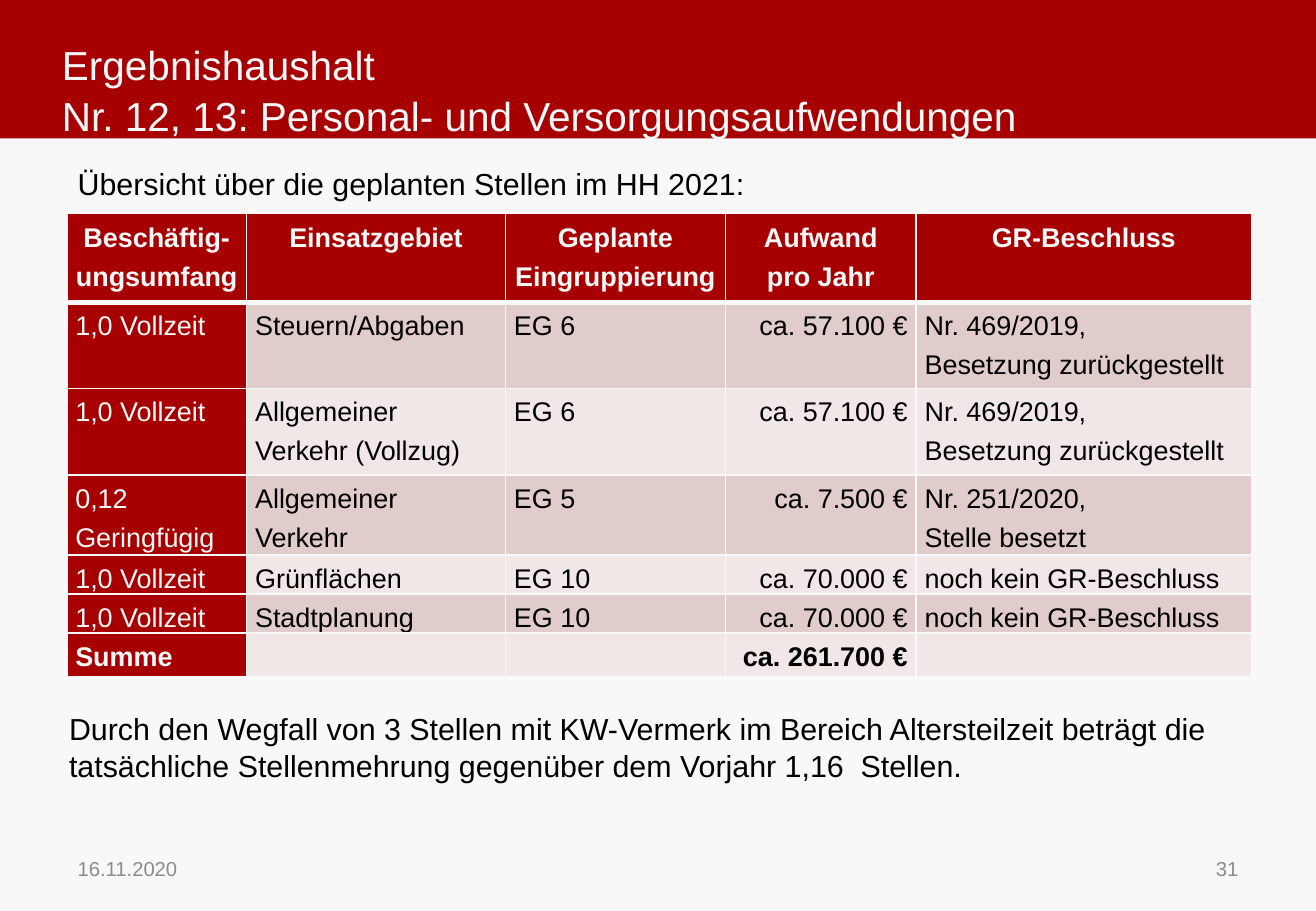
import pptx
import pptx.dml.color
import pptx.enum.shapes
import pptx.enum.text
import pptx.oxml
import pptx.oxml.ns
import pptx.util
from pptx.util import Inches

ALIGN = pptx.enum.text.PP_ALIGN
ANCHOR = pptx.enum.text.MSO_ANCHOR
FONT = "Arial"
COLORS = {"red": "A60000", "paper": "F8F8F8", "black": "000000", "gray": "8C8C8C",
          "band_dark": "E1CCCC", "band_light": "F1E7E7"}

TITLE = "Ergebnishaushalt\vNr. 12, 13: Personal- und Versorgungsaufwendungen"
TEXTS = [
    ("Übersicht über die geplanten Stellen im HH 2021:",
     (0.54, 1.31, 9.28, 0.4), 18, "black", ALIGN.LEFT, ANCHOR.TOP),
    ("Durch den Wegfall von 3 Stellen mit KW-Vermerk im Bereich Altersteilzeit beträgt die "
     "tatsächliche Stellenmehrung gegenüber dem Vorjahr 1,16  Stellen.",
     (0.47, 5.8, 9.84, 0.71), 18, "black", ALIGN.LEFT, ANCHOR.TOP),
    ("16.11.2020", (0.54, 6.95, 2.53, 0.4), 12, "gray", ALIGN.LEFT, ANCHOR.MIDDLE),
    ("31", (7.76, 6.95, 2.53, 0.4), 12, "gray", ALIGN.RIGHT, ANCHOR.MIDDLE),
]
POSITIONS = [
    ("Beschäftig-ungsumfang", "Einsatzgebiet", "Geplante\nEingruppierung",
     "Aufwand\npro Jahr", "GR-Beschluss"),
    ("1,0 Vollzeit", "Steuern/Abgaben", "EG 6", "ca. 57.100 €",
     "Nr. 469/2019,\nBesetzung zurückgestellt"),
    ("1,0 Vollzeit", "Allgemeiner Verkehr (Vollzug)", "EG 6", "ca. 57.100 €",
     "Nr. 469/2019,\nBesetzung zurückgestellt"),
    ("0,12 Geringfügig", "Allgemeiner Verkehr", "EG 5", "ca. 7.500 €",
     "Nr. 251/2020,\nStelle besetzt"),
    ("1,0 Vollzeit", "Grünflächen", "EG 10", "ca. 70.000 €", "noch kein GR-Beschluss"),
    ("1,0 Vollzeit", "Stadtplanung", "EG 10", "ca. 70.000 €", "noch kein GR-Beschluss"),
    ("Summe", "", "", "ca. 261.700 €", ""),
]
COLUMN_WIDTHS = [1.48, 2.13, 1.81, 1.57, 2.76]
ROW_HEIGHTS = [0.73, 0.71, 0.71, 0.66, 0.32, 0.32, 0.36]
AMOUNT_COLUMN = 3


def rgb(name):
    return pptx.dml.color.RGBColor.from_string(COLORS[name])


def format_text(frame, size, color, alignment, bold=False, line_spacing=None):
    for paragraph in frame.paragraphs:
        paragraph.alignment = alignment
        if line_spacing:
            paragraph.line_spacing = line_spacing
        for run in paragraph.runs:
            run.font.name = FONT
            run.font.size = pptx.util.Pt(size)
            run.font.bold = bold
            run.font.color.rgb = rgb(color)


def set_borders(cell, widths):
    properties = cell._tc.get_or_add_tcPr()
    for index, (side, points) in enumerate(widths.items()):
        properties.insert(index, pptx.oxml.parse_xml(
            f'<a:{side} {pptx.oxml.ns.nsdecls("a")} w="{pptx.util.Pt(points)}">'
            f'<a:solidFill><a:srgbClr val="{COLORS["paper"]}"/></a:solidFill></a:{side}>'))


def add_title(slide, width):
    title = slide.shapes.title
    band = slide.shapes.add_shape(pptx.enum.shapes.MSO_SHAPE.RECTANGLE,
                                  0, 0, width, Inches(1.14))
    band.shadow.inherit = False
    band.fill.solid()
    band.fill.fore_color.rgb = rgb("red")
    band.line.fill.background()
    title.element.addprevious(band.element)
    title.left, title.top, title.width, title.height = map(Inches, (0.51, 0.36, 8.32, 0.74))
    frame = title.text_frame
    frame.text = TITLE
    frame.word_wrap = True
    frame.auto_size = pptx.enum.text.MSO_AUTO_SIZE.NONE
    frame.vertical_anchor = ANCHOR.MIDDLE
    frame.margin_left = frame.margin_right = frame.margin_top = frame.margin_bottom = 0
    format_text(frame, 24, "paper", ALIGN.LEFT, line_spacing=1.05)


def add_text(slide, text, box, size, color, alignment, anchor):
    frame = slide.shapes.add_textbox(*map(Inches, box)).text_frame
    frame.word_wrap = True
    frame.vertical_anchor = anchor
    frame.text = text
    format_text(frame, size, color, alignment)


def add_positions_table(slide):
    table = slide.shapes.add_table(
        len(POSITIONS), len(COLUMN_WIDTHS), Inches(0.55), Inches(1.76),
        Inches(sum(COLUMN_WIDTHS)), Inches(sum(ROW_HEIGHTS))).table
    for column, width in zip(table.columns, COLUMN_WIDTHS):
        column.width = Inches(width)
    for row, height in zip(table.rows, ROW_HEIGHTS):
        row.height = Inches(height)
    for row_index, values in enumerate(POSITIONS):
        header = row_index == 0
        total = row_index == len(POSITIONS) - 1
        band = "band_dark" if row_index % 2 else "band_light"
        for column_index, value in enumerate(values):
            cell = table.cell(row_index, column_index)
            on_red = header or column_index == 0
            cell.fill.solid()
            cell.fill.fore_color.rgb = rgb("red" if on_red else band)
            set_borders(cell, {"lnL": 1, "lnR": 1, "lnT": 3 if row_index == 1 else 1,
                               "lnB": 3 if header else 1})
            cell.margin_left = cell.margin_right = Inches(0.07)
            cell.margin_top = cell.margin_bottom = 0
            cell.text_frame.text = value
            alignment = ALIGN.LEFT
            if header:
                alignment = ALIGN.CENTER
            elif column_index == AMOUNT_COLUMN:
                alignment = ALIGN.RIGHT
            format_text(cell.text_frame, 16, "paper" if on_red else "black", alignment,
                        bold=header or total, line_spacing=1.3 if value else None)


def main():
    presentation = pptx.Presentation()
    presentation.slide_width = Inches(10.83)
    presentation.slide_height = Inches(7.5)
    slide = presentation.slides.add_slide(presentation.slide_layouts[5])
    slide.background.fill.solid()
    slide.background.fill.fore_color.rgb = rgb("paper")
    add_title(slide, presentation.slide_width)
    add_positions_table(slide)
    for text in TEXTS:
        add_text(slide, *text)
    presentation.save("out.pptx")


if __name__ == "__main__":
    main()
